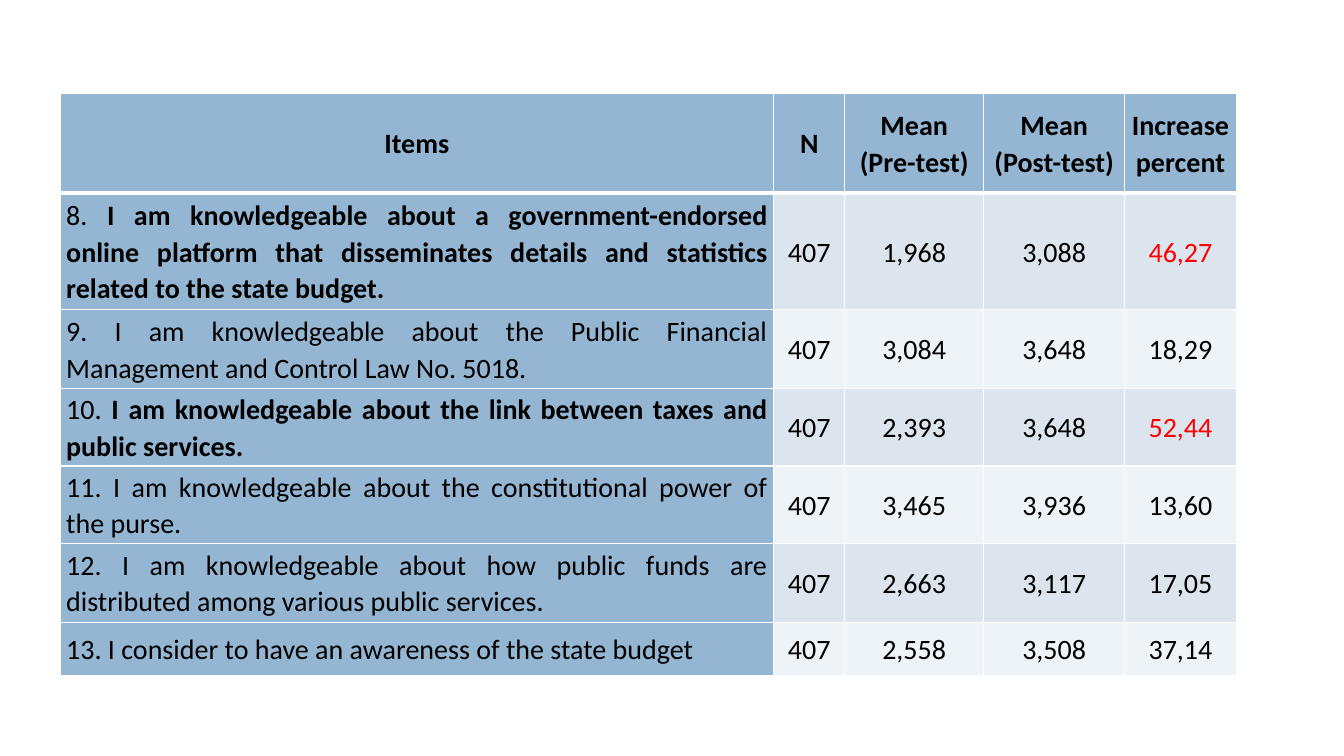
"""Build a slide with a table of pre-test and post-test means."""
from pptx import Presentation
from pptx.dml.color import RGBColor
from pptx.enum.text import MSO_ANCHOR, PP_ALIGN
from pptx.oxml import parse_xml
from pptx.oxml.ns import nsdecls
from pptx.util import Pt

HEADINGS = ["Items", "N", "Mean (Pre-test)", "Mean (Post-test)", "Increase percent"]
ITEMS = [
    ("8. ", "I am knowledgeable about a government-endorsed online platform that "
     "disseminates details and statistics related to the state budget.",
     "407", "1,968", "3,088", "46,27"),
    ("9. ", "I am knowledgeable about the Public Financial Management and Control "
     "Law No. 5018.", "407", "3,084", "3,648", "18,29"),
    ("10. ", "I am knowledgeable about the link between taxes and public services.",
     "407", "2,393", "3,648", "52,44"),
    ("11. ", "I am knowledgeable about the constitutional power of the purse.",
     "407", "3,465", "3,936", "13,60"),
    ("12. ", "I am knowledgeable about how public funds are distributed among "
     "various public services.", "407", "2,663", "3,117", "17,05"),
    ("13. ", "I consider to have an awareness of the state budget",
     "407", "2,558", "3,508", "37,14"),
]
HIGHLIGHTED = {"8. ", "10. "}
COLUMN_WIDTHS = [510, 50.5, 99.5, 100.5, 80]
ROW_HEIGHTS = [71, 83.5, 56.2, 55.4, 55.4, 56.2, 38.2]
LEFT, TOP = 42.8, 66.8
BLUE, BANDS = "94B6D2", ["DCE5EE", "EEF3F7"]
BLACK, RED, WHITE = "000000", "FF0000", "FFFFFF"


def color(hex_string):
    return RGBColor.from_string(hex_string)


def add_borders(cell, top, bottom):
    for side, width in (("L", 1), ("R", 1), ("T", top), ("B", bottom)):
        cell._tc.get_or_add_tcPr().append(parse_xml(
            f'<a:ln{side} {nsdecls("a")} w="{Pt(width)}"><a:solidFill>'
            f'<a:srgbClr val="{WHITE}"/></a:solidFill></a:ln{side}>'))


def fill_cell(cell, spans, fill, align=PP_ALIGN.CENTER, top=1, bottom=1):
    """Style one cell and write its (text, bold, colour) spans."""
    add_borders(cell, top, bottom)
    cell.fill.solid()
    cell.fill.fore_color.rgb = color(fill)
    cell.vertical_anchor = MSO_ANCHOR.MIDDLE
    cell.margin_left = cell.margin_right = Pt(4.5)
    cell.margin_top = cell.margin_bottom = Pt(0)
    para = cell.text_frame.paragraphs[0]
    para.alignment = align
    para.line_spacing = 1.07
    para.space_before = para.space_after = Pt(6)
    para.font.name, para.font.size = "Calibri", Pt(20)
    for text, bold, ink in spans:
        span = para.add_run()
        span.text = text
        span.font.bold = bold
        span.font.color.rgb = color(ink)


deck = Presentation()
deck.slide_width, deck.slide_height = Pt(960), Pt(540)
page = deck.slides.add_slide(deck.slide_layouts[6])
table = page.shapes.add_table(
    len(ROW_HEIGHTS), len(COLUMN_WIDTHS), Pt(LEFT), Pt(TOP),
    Pt(sum(COLUMN_WIDTHS)), Pt(sum(ROW_HEIGHTS))).table
for column, width in zip(table.columns, COLUMN_WIDTHS):
    column.width = Pt(width)
for row, height in zip(table.rows, ROW_HEIGHTS):
    row.height = Pt(height)

for index, heading in enumerate(HEADINGS):
    fill_cell(table.cell(0, index), [(heading, True, BLACK)], BLUE, bottom=3)

for line, (number, statement, *values) in enumerate(ITEMS, 1):
    top = 3 if line == 1 else 1
    strong = number in HIGHLIGHTED
    spans = ([(number, False, BLACK), (statement, True, BLACK)] if strong
             else [(number + statement, False, BLACK)])
    fill_cell(table.cell(line, 0), spans, BLUE, PP_ALIGN.JUSTIFY, top)
    for index, value in enumerate(values, 1):
        ink = RED if strong and index == len(values) else BLACK
        fill_cell(table.cell(line, index), [(value, False, ink)],
                  BANDS[(line - 1) % 2], top=top)

deck.save("out.pptx")
